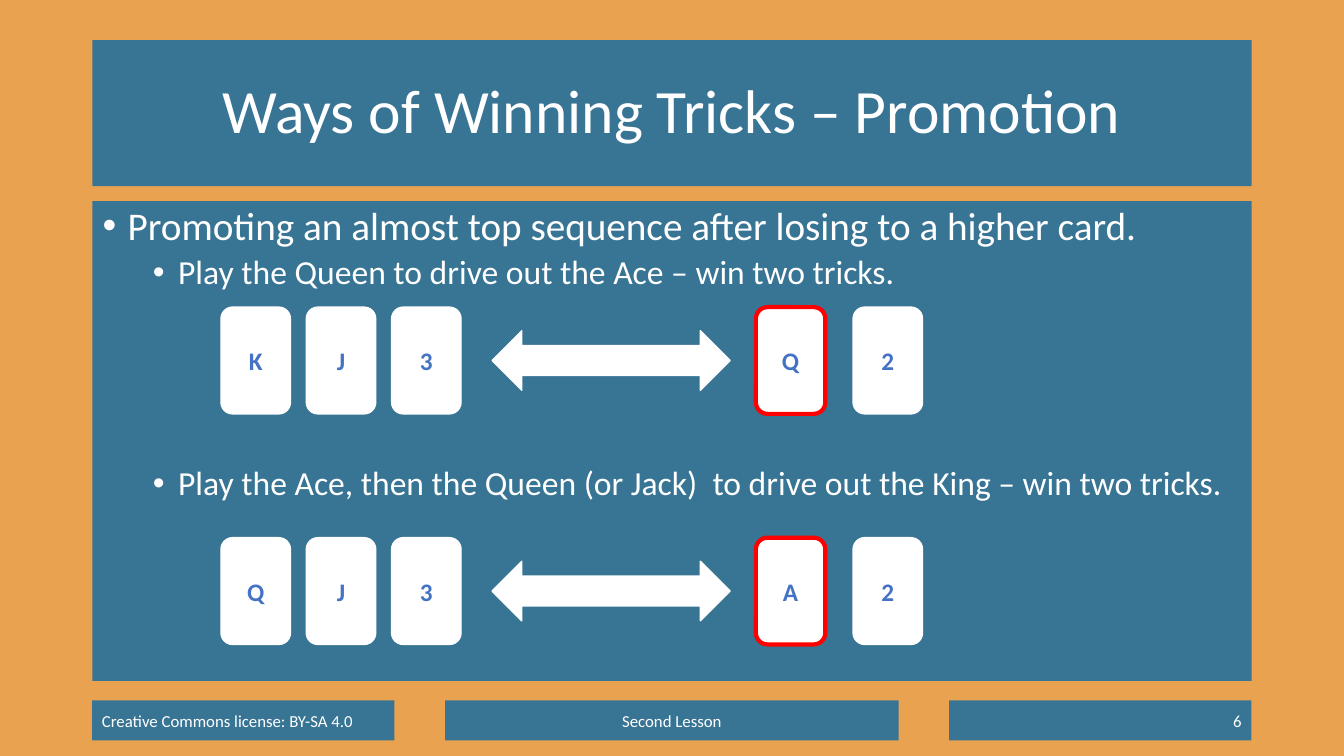
from pptx import Presentation
from pptx.dml.color import RGBColor
from pptx.enum.shapes import MSO_SHAPE
from pptx.enum.text import MSO_ANCHOR, MSO_AUTO_SIZE, PP_ALIGN
from pptx.oxml.ns import qn
from pptx.util import Cm, Pt
from lxml import etree

ORANGE = RGBColor(0xE9, 0xA3, 0x50)
TEAL = RGBColor(0x38, 0x74, 0x94)
WHITE = RGBColor(0xFF, 0xFF, 0xFF)
BLUE = RGBColor(0x44, 0x72, 0xC4)
RED = RGBColor(0xFF, 0x00, 0x00)

RECTANGLE = MSO_SHAPE.RECTANGLE
CARD = MSO_SHAPE.ROUNDED_RECTANGLE
ARROW = MSO_SHAPE.LEFT_RIGHT_ARROW
LEFT, CENTER, RIGHT = PP_ALIGN.LEFT, PP_ALIGN.CENTER, PP_ALIGN.RIGHT
TOP, MIDDLE = MSO_ANCHOR.TOP, MSO_ANCHOR.MIDDLE
NO_AUTOFIT = MSO_AUTO_SIZE.NONE

CARD_WIDTH, CARD_HEIGHT = 1.75, 2.69
ARROW_WIDTH, ARROW_HEIGHT = 6, 1.5
HAND_LEFT, CARD_STEP = 5.57, 2.15
ARROW_LEFT = 12.4
LED_LEFT, SMALL_LEFT = 19.05, 21.5


class LessonSlide:
    """Holds the lesson style and the slide being built."""

    def __init__(self, presentation):
        self.font_name = "Calibri"
        self.slide = presentation.slides.add_slide(presentation.slide_layouts[1])
        self.slide.background.fill.solid()
        self.slide.background.fill.fore_color.rgb = ORANGE

    def format_text(self, paragraph, size, color, alignment, bold=False):
        paragraph.alignment = alignment
        paragraph.font.name = self.font_name
        paragraph.font.size = Pt(size)
        paragraph.font.bold = bold
        paragraph.font.color.rgb = color

    def place(self, placeholder, left, top, width, height, anchor):
        placeholder.left, placeholder.top = Cm(left), Cm(top)
        placeholder.width, placeholder.height = Cm(width), Cm(height)
        placeholder.fill.solid()
        placeholder.fill.fore_color.rgb = TEAL
        placeholder.text_frame.auto_size = NO_AUTOFIT
        placeholder.text_frame.vertical_anchor = anchor

    def title(self, text, *box):
        title = self.slide.shapes.title
        self.place(title, *box, MIDDLE)
        title.text_frame.text = text
        paragraph = title.text_frame.paragraphs[0]
        paragraph.line_spacing = 0.9
        self.format_text(paragraph, 44, WHITE, CENTER)

    def bullets(self, items, *box):
        body = self.slide.placeholders[1]
        self.place(body, *box, TOP)
        body.text_frame.text = "\n".join(text for text, *_ in items)
        for paragraph, item in zip(body.text_frame.paragraphs, items):
            _, level, size, space_before = item
            paragraph.level = level
            paragraph.line_spacing = 0.9
            paragraph.space_before = Pt(space_before)
            self.format_text(paragraph, size, WHITE, LEFT)
            properties = paragraph._p.get_or_add_pPr()
            properties.set("marL", str(Cm(0.635 + 1.27 * level)))
            properties.set("indent", str(Cm(-0.635)))
            etree.SubElement(properties, qn("a:buFont")).set("typeface", "Arial")
            etree.SubElement(properties, qn("a:buChar")).set("char", "•")
            default_run = properties.find(qn("a:defRPr"))
            properties.append(default_run)

    def shape(self, kind, left, top, width, height, fill, line=None, line_width=1):
        shape = self.slide.shapes.add_shape(
            kind, Cm(left), Cm(top), Cm(width), Cm(height))
        shape.shadow.inherit = False
        shape.fill.solid()
        shape.fill.fore_color.rgb = fill
        if line is None:
            shape.line.fill.background()
        else:
            shape.line.color.rgb = line
            shape.line.width = Pt(line_width)
        return shape

    def label(self, shape, text, size, color, alignment, bold=False):
        shape.text_frame.text = text
        shape.text_frame.word_wrap = True
        shape.text_frame.vertical_anchor = MIDDLE
        self.format_text(shape.text_frame.paragraphs[0], size, color, alignment, bold)

    def footer(self, text, left, width, alignment):
        bar = self.shape(RECTANGLE, left, 17.65, width, 1.01, TEAL)
        self.label(bar, text, 12, WHITE, alignment)

    def card(self, rank, left, top, line=WHITE, line_width=1):
        card = self.shape(
            CARD, left, top, CARD_WIDTH, CARD_HEIGHT, WHITE, line, line_width)
        self.label(card, rank, 18, BLUE, CENTER, bold=True)

    def deal(self, hand, led, small, top):
        for index, rank in enumerate(hand):
            self.card(rank, HAND_LEFT + index * CARD_STEP, top)
        arrow_top = top + (CARD_HEIGHT - ARROW_HEIGHT) / 2
        self.shape(ARROW, ARROW_LEFT, arrow_top, ARROW_WIDTH, ARROW_HEIGHT, WHITE, WHITE)
        self.card(led, LED_LEFT, top, RED, 3)
        self.card(small, SMALL_LEFT, top)


def main():
    presentation = Presentation()
    presentation.slide_width, presentation.slide_height = Cm(33.87), Cm(19.05)
    lesson = LessonSlide(presentation)
    lesson.title("Ways of Winning Tricks – Promotion", 2.33, 1.01, 29.21, 3.68)
    lesson.bullets([
        ("Promoting an almost top sequence after losing to a higher card.", 0, 28, 10),
        ("Play the Queen to drive out the Ace – win two tricks.", 1, 24, 5),
        ("Play the Ace, then the Queen (or Jack)  to drive out the King – win two tricks.",
         1, 24, 125),
    ], 2.33, 5.07, 29.21, 12.09)
    lesson.footer("Creative Commons license: BY-SA 4.0", 2.32, 7.62, LEFT)
    lesson.footer("Second Lesson", 11.22, 11.43, CENTER)
    lesson.footer("6", 23.92, 7.62, RIGHT)
    lesson.deal("KJ3", "Q", "2", 7.74)
    lesson.deal("QJ3", "A", "2", 13.55)
    presentation.save("out.pptx")


if __name__ == "__main__":
    main()
